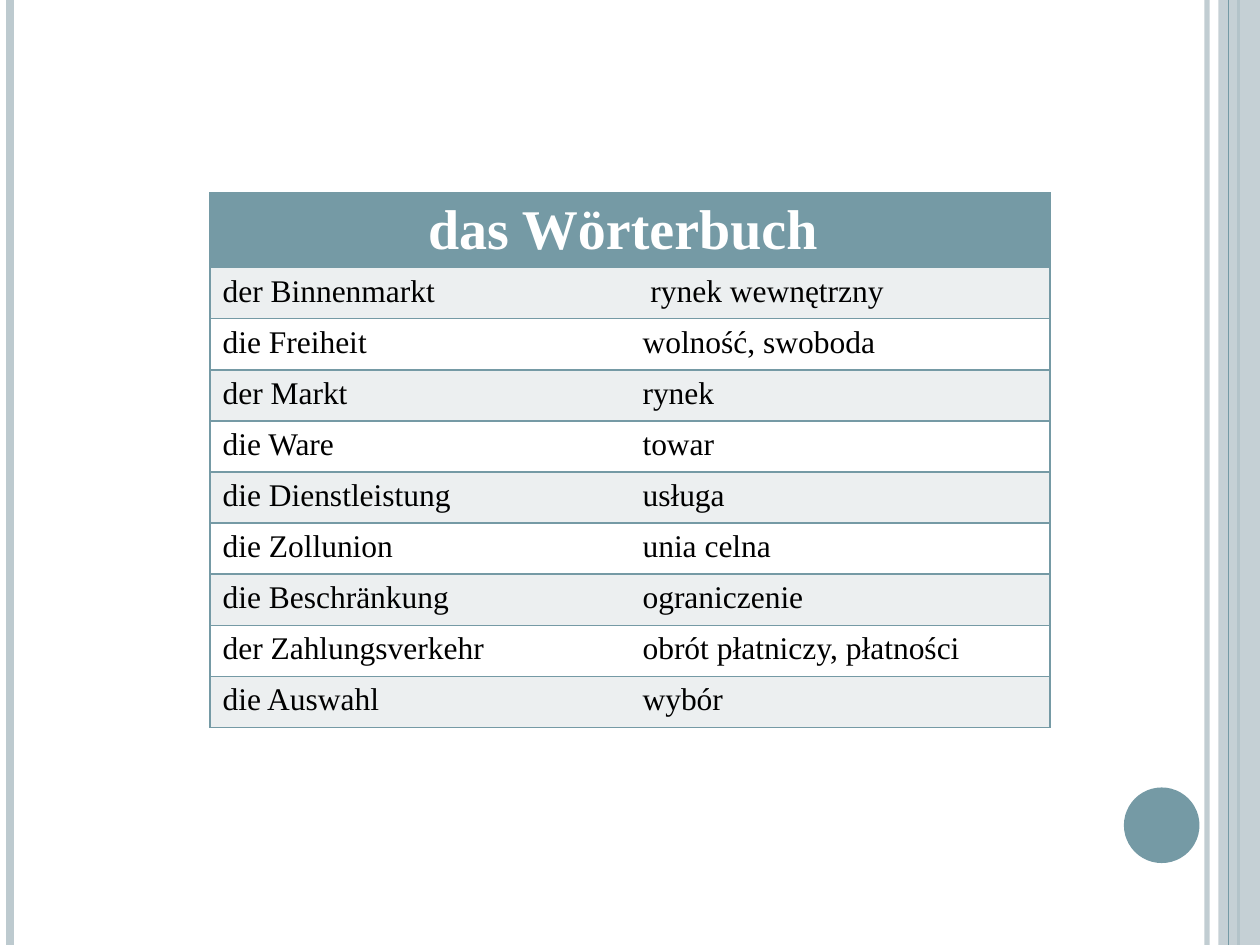
import lxml.etree
import pptx
import pptx.dml.color
import pptx.enum.shapes
import pptx.enum.text
import pptx.oxml.ns
import pptx.util

COLORS = {"teal": "759AA5", "mist": "BDCACF", "band": "ECEFF0",
          "white": "FFFFFF", "black": "000000"}
FONT = "Times New Roman"
qn = pptx.oxml.ns.qn


def rgb(name):
    return pptx.dml.color.RGBColor.from_string(COLORS[name])


def set_alpha(fill_parent, percent):
    color = fill_parent.find(qn("a:solidFill"))[0]
    lxml.etree.SubElement(color, qn("a:alpha"), val=str(percent * 1000))


deck = pptx.Presentation()
deck.slide_width = pptx.util.Inches(10)
deck.slide_height = pptx.util.Inches(7.5)
W, H = deck.slide_width, deck.slide_height
slide = deck.slides.add_slide(deck.slide_layouts[6])
shapes = slide.shapes

# Vertical stripes and the right-hand band, back to front:
# (kind, left share, width in points or width share, color, opacity)
for kind, left, size, color, opacity in [
    ("line", 0.958, 3, "mist", 93),
    ("line", 0.008, 4.5, "mist", 100),
    ("line", 0.983, 1.5, "teal", 100),
    ("band", 0.967, 0.033, "mist", 87),
    ("line", 0.975, 0.75, "teal", 100),
]:
    x = int(W * left)
    if kind == "line":
        stripe = shapes.add_connector(
            pptx.enum.shapes.MSO_CONNECTOR.STRAIGHT, x, 0, x, H)
        stripe.line.width = pptx.util.Pt(size)
        stripe.line.color.rgb = rgb(color)
        properties = stripe._element.spPr
        lxml.etree.SubElement(properties, qn("a:effectLst"))
        painted = properties.find(qn("a:ln"))
    else:
        band = shapes.add_shape(
            pptx.enum.shapes.MSO_SHAPE.RECTANGLE, x, 0, int(W * size), H)
        band.shadow.inherit = False
        band.fill.solid()
        band.fill.fore_color.rgb = rgb(color)
        band.line.fill.background()
        painted = band._element.spPr
    if opacity < 100:
        set_alpha(painted, opacity)

# Corner disc
disc = shapes.add_shape(pptx.enum.shapes.MSO_SHAPE.OVAL, int(W * 0.892),
                        int(H * 5 / 6), int(W * 0.06), int(W * 0.06))
disc.shadow.inherit = False
disc.fill.solid()
disc.fill.fore_color.rgb = rgb("teal")
disc.line.fill.background()

# Vocabulary table: a merged heading above German and Polish columns
heading = "das Wörterbuch "
vocabulary = [
    ("der Binnenmarkt", " rynek wewnętrzny"),
    ("die Freiheit", "wolność, swoboda"),
    ("der Markt", "rynek"),
    ("die Ware", "towar"),
    ("die Dienstleistung", "usługa"),
    ("die Zollunion", "unia celna"),
    ("die Beschränkung", "ograniczenie"),
    ("der Zahlungsverkehr", "obrót płatniczy, płatności"),
    ("die Auswahl", "wybór"),
]
rows = [(heading, "")] + vocabulary
row_height = int(H * 0.0541)
table = shapes.add_table(len(rows), 2, W // 6, int(H * 0.204), W * 2 // 3,
                         row_height * len(rows)).table
for row in table.rows:
    row.height = row_height
table.cell(0, 0).merge(table.cell(0, 1))

for r, words in enumerate(rows):
    is_heading = r == 0
    background = "teal" if is_heading else "band" if r % 2 else "white"
    for c, word in enumerate(words):
        cell = table.cell(r, c)

        # Teal rules around each row, none between the columns
        inner_side = "R" if c == 0 else "L"
        cell_properties = cell._tc.get_or_add_tcPr()
        for side in "LRTB":
            border = lxml.etree.SubElement(
                cell_properties, qn("a:ln" + side), w=str(pptx.util.Pt(1)))
            if side == inner_side and not is_heading:
                lxml.etree.SubElement(border, qn("a:noFill"))
            else:
                paint = lxml.etree.SubElement(border, qn("a:solidFill"))
                lxml.etree.SubElement(
                    paint, qn("a:srgbClr"), val=COLORS["teal"])
        cell.fill.solid()
        cell.fill.fore_color.rgb = rgb(background)

        if word:
            paragraph = cell.text_frame.paragraphs[0]
            if is_heading:
                paragraph.alignment = pptx.enum.text.PP_ALIGN.CENTER
            run = paragraph.add_run()
            run.text = word
            run.font.name = FONT
            run.font.size = pptx.util.Pt(32 if is_heading else 18)
            run.font.bold = is_heading
            run.font.color.rgb = rgb("white" if is_heading else "black")

deck.save("out.pptx")
